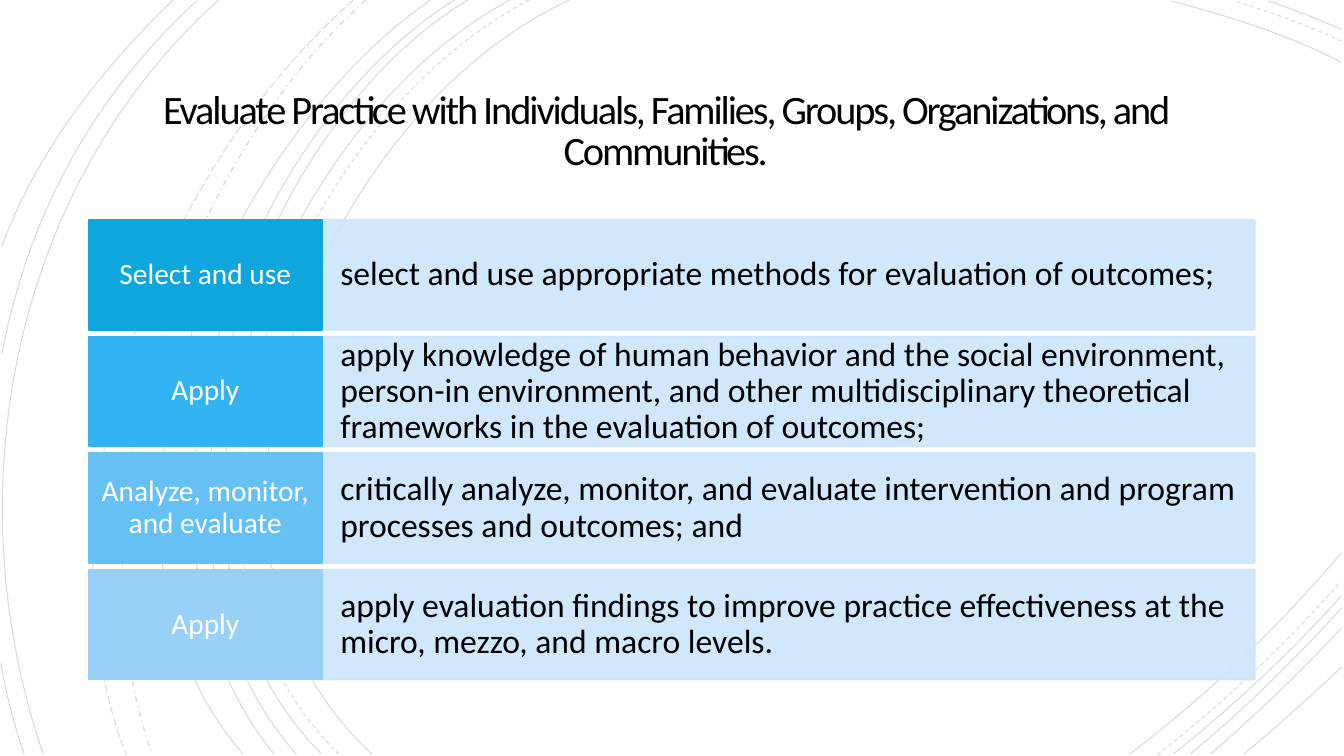
from dataclasses import dataclass

from lxml import etree
from pptx import Presentation
from pptx.dml.color import RGBColor
from pptx.enum import dml, shapes, text
from pptx.oxml import ns
from pptx.util import Pt


@dataclass(frozen=True)
class Theme:
    font: str = "Calibri"
    ink: str = "000000"
    light: str = "FFFFFF"
    band: str = "CCE5FB"
    band_opacity: int = 90
    arc_opacity: int = 15
    title_size: float = 28.8
    label_size: float = 21
    body_size: float = 24
    border: float = 1.25


THEME = Theme()
SOLID, DASH = dml.MSO_LINE.SOLID, dml.MSO_LINE.DASH
LONG_DASH, DASH_DOT = dml.MSO_LINE.LONG_DASH, dml.MSO_LINE.DASH_DOT

TITLE = "Evaluate Practice with Individuals, Families, Groups, Organizations, and Communities."

# label, label colour, description
ROWS = [
    ("Select and use", "0FA5DD",
     "select and use appropriate methods for evaluation of outcomes;"),
    ("Apply", "31B4F1",
     "apply knowledge of human behavior and the social environment, person-in environment, "
     "and other multidisciplinary theoretical frameworks in the evaluation of outcomes;"),
    ("Analyze, monitor, and evaluate", "65C0F4",
     "critically analyze, monitor, and evaluate intervention and program processes "
     "and outcomes; and"),
    ("Apply", "98D0F7",
     "apply evaluation findings to improve practice effectiveness at the micro, mezzo, "
     "and macro levels."),
]
ROW_TOP, ROW_PITCH, ROW_HEIGHT = 157, 83.3, 78.5
LABEL_LEFT, LABEL_WIDTH = 63.4, 166.5
BODY_LEFT, BODY_WIDTH = 230.2, 666

# Start, two control points and end of each curve, in points
ARCS = {
    SOLID: [
        [(406.8, 0), (226.8, 82.8), (103, 388.8), (265.7, 538.6)],
        [(364.3, 0), (194.4, 91.4), (79.2, 386.6), (229.7, 538.6)],
        [(334.1, 0), (175.7, 95.8), (79.2, 389.5), (211.7, 538.6)],
        [(324.7, 0), (166.3, 99.4), (69.8, 383.8), (195.8, 538.6)],
        [(307.4, 0), (156.2, 105.8), (38.2, 380.9), (173.5, 538.6)],
        [(156.2, 0), (7.9, 133.2), (-33.1, 352.8), (31, 538.6)],
        [(140.4, 0.7), (66.2, 69.1), (20.2, 154.1), (1.4, 252.7)],
        [(123.8, 0), (72, 49.7), (26.6, 108), (1.4, 175.7)],
        [(0.7, 473.8), (4.3, 496.1), (10.1, 517.7), (17.3, 538.6)],
        [(958.3, 44.6), (920.2, 24.5), (877, 11.5), (836.6, 0.7)],
        [(958.3, 20.9), (941, 13.7), (923.8, 6.5), (905.8, 0.7)],
        [(807.1, 538.6), (861.8, 496.8), (913.7, 447.8), (958.3, 394.6)],
        [(838.1, 538.6), (880.6, 504.7), (921.6, 466.6), (958.3, 425.5)],
        [(850.3, 538.6), (888.5, 506.9), (924.5, 471.6), (958.3, 434.2)],
        [(864.7, 538.6), (897.1, 510.5), (928.8, 480.2), (958.3, 448.6)],
        [(888.5, 538.6), (912.2, 519.1), (935.3, 498.2), (958.3, 476.6)],
    ],
    DASH: [
        [(378, 0), (205.2, 90), (88.6, 386.6), (241.9, 538.6)],
        [(958.3, 29.5), (933.8, 18), (907.2, 8.6), (882, 0.7)],
        [(826.6, 539.3), (873.4, 502.6), (918, 460.8), (957.6, 415.4)],
    ],
    LONG_DASH: [[(252.7, 0), (113, 121.7), (20.9, 359.3), (90, 538.6)]],
    DASH_DOT: [[(261.4, 0), (126.7, 119.5), (46.8, 366.5), (108.7, 538.6)]],
}


def paint(fill, colour, opacity=100):
    """Give a fill a solid colour; opacity is in percent."""
    fill.solid()
    fill.fore_color.rgb = RGBColor.from_string(colour)
    if opacity < 100:
        for tint in fill._xPr.iter(ns.qn("a:srgbClr")):
            etree.SubElement(tint, ns.qn("a:alpha")).set("val", str(opacity * 1000))


def add_arc(page, points, dash):
    corners = [(Pt(x), Pt(y)) for x, y in points]
    builder = page.shapes.build_freeform(*corners[0])
    builder.add_line_segments(corners[1:], close=False)
    arc = builder.convert_to_shape()
    arc.shadow.inherit = False
    arc.fill.background()
    paint(arc.line.fill, THEME.ink, THEME.arc_opacity)
    arc.line.width = Pt(1 if dash == DASH_DOT else 0.75)
    arc.line.dash_style = dash

    # The three straight segments become one cubic curve.
    segments = list(arc._element.iter(ns.qn("a:lnTo")))
    curve = etree.SubElement(segments[0].getparent(), ns.qn("a:cubicBezTo"))
    for segment in segments:
        curve.append(segment[0])
        segment.getparent().remove(segment)


def write(shape, words, size, colour, align, margins, spacing=0.9):
    """Fill a shape with one paragraph; margins are horizontal and vertical."""
    frame = shape.text_frame
    frame.text = words
    frame.word_wrap = True
    frame.vertical_anchor = text.MSO_ANCHOR.MIDDLE
    frame.margin_left = frame.margin_right = Pt(margins[0])
    frame.margin_top = frame.margin_bottom = Pt(margins[1])
    para = frame.paragraphs[0]
    para.alignment = align
    para.line_spacing = spacing
    span = para.runs[0]
    span.font.name = THEME.font
    span.font.size = Pt(size)
    span.font.color.rgb = RGBColor.from_string(colour)
    return span


def add_title(page):
    box = page.shapes.add_textbox(Pt(79.2), Pt(44.6), Pt(792.7), Pt(100.8))
    span = write(box, TITLE, THEME.title_size, THEME.ink,
                 text.PP_ALIGN.CENTER, (18, 18), spacing=0.85)
    span.font._element.set("spc", "-150")


def add_panel(page, left, top, width, colour, opacity=100):
    panel = page.shapes.add_shape(shapes.MSO_SHAPE.RECTANGLE,
                                  Pt(left), Pt(top), Pt(width), Pt(ROW_HEIGHT))
    panel.shadow.inherit = False
    paint(panel.fill, colour, opacity)
    paint(panel.line.fill, colour, opacity)
    panel.line.width = Pt(THEME.border)
    return panel


def add_row(page, top, label, colour, description):
    body = add_panel(page, BODY_LEFT, top, BODY_WIDTH, THEME.band, THEME.band_opacity)
    write(body, description, THEME.body_size, THEME.ink, text.PP_ALIGN.LEFT, (12.9, 20))
    tag = add_panel(page, LABEL_LEFT, top, LABEL_WIDTH, colour)
    write(tag, label, THEME.label_size, THEME.light, text.PP_ALIGN.CENTER, (8.8, 7.8))


def main():
    deck = Presentation()
    deck.slide_width, deck.slide_height = Pt(960), Pt(540)
    page = deck.slides.add_slide(deck.slide_layouts[6])
    paint(page.background.fill, THEME.light)
    for dash, curves in ARCS.items():
        for points in curves:
            add_arc(page, points, dash)
    add_title(page)
    for index, row in enumerate(ROWS):
        add_row(page, ROW_TOP + index * ROW_PITCH, *row)
    deck.save("out.pptx")


if __name__ == "__main__":
    main()
